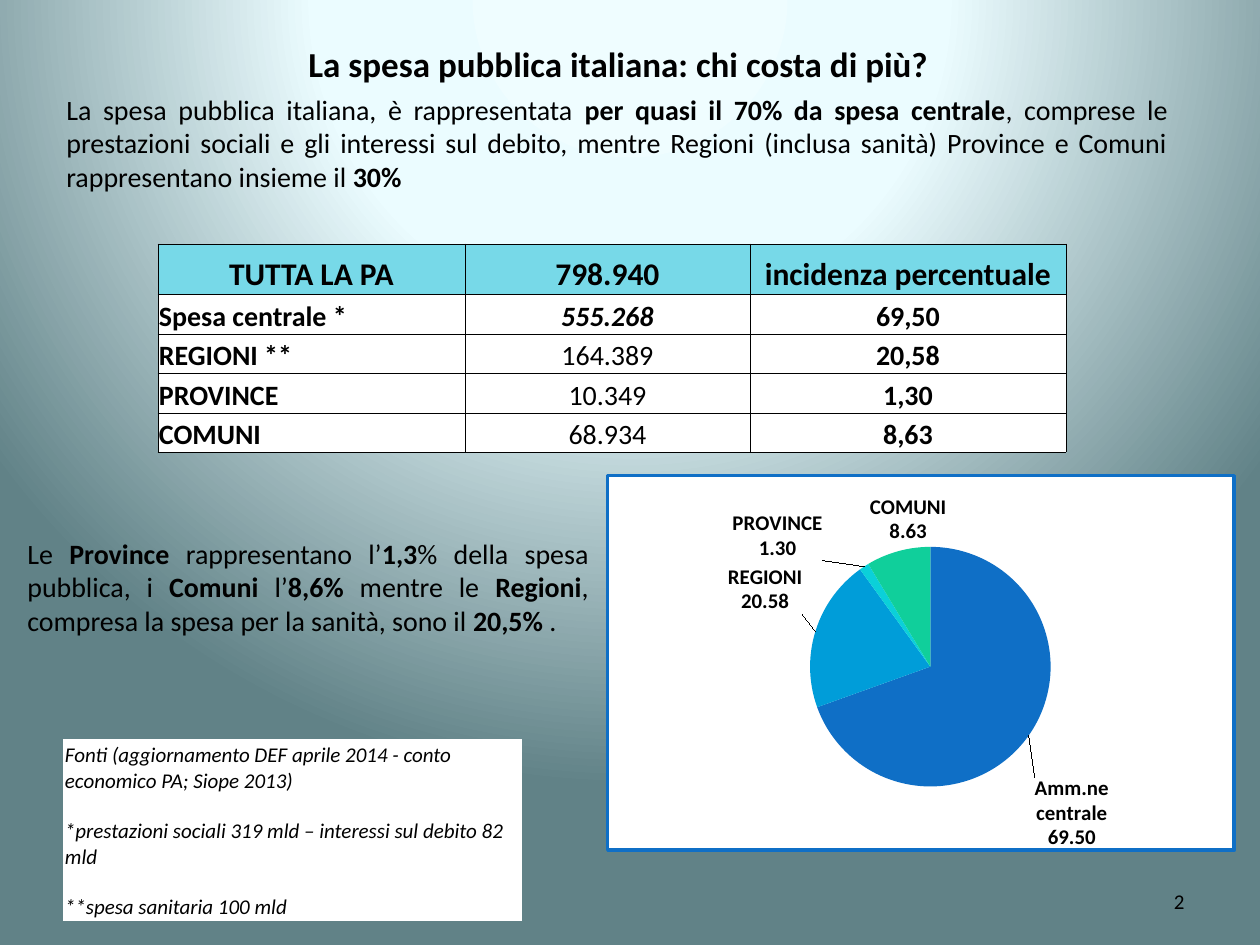
from copy import deepcopy
from dataclasses import dataclass

from pptx import Presentation
from pptx.chart.data import CategoryChartData
from pptx.dml.color import RGBColor
from pptx.enum.chart import XL_CHART_TYPE, XL_LABEL_POSITION
from pptx.enum.text import MSO_ANCHOR, PP_ALIGN
from pptx.oxml import parse_xml
from pptx.oxml.ns import nsdecls, qn
from pptx.util import Emu, Pt

PIE = XL_CHART_TYPE.PIE
OUTSIDE = XL_LABEL_POSITION.OUTSIDE_END
TOP, MIDDLE, BOTTOM = MSO_ANCHOR.TOP, MSO_ANCHOR.MIDDLE, MSO_ANCHOR.BOTTOM
LEFT, CENTER, RIGHT, JUSTIFY = PP_ALIGN.LEFT, PP_ALIGN.CENTER, PP_ALIGN.RIGHT, PP_ALIGN.JUSTIFY
EMU_PER_PX = 914400 // 126
BOLD = {"bold": True}
ITALIC = {"italic": True}


@dataclass(frozen=True)
class Theme:
    font: str = "Calibri"
    ink: str = "000000"
    paper: str = "FFFFFF"
    header: str = "77D9E8"
    frame: str = "0F6FC6"
    slices: tuple = ("0F6FC6", "009DD9", "0BD0D9", "10CF9B")
    backdrop: tuple = ((0, "EFFDFF"), (40, "EBFCFF"), (100, "618287"))
    title: int = 20
    heading: int = 18
    body: int = 16
    small: int = 12
    chart: int = 10


THEME = Theme()


@dataclass(frozen=True)
class Box:
    left: int
    top: int
    width: int
    height: int

    def emu(self) -> tuple:
        return tuple(px(value) for value in (self.left, self.top, self.width, self.height))


@dataclass(frozen=True)
class Run:
    text: str
    style: dict


@dataclass(frozen=True)
class TextBlock:
    box: Box
    runs: tuple
    size: int
    align: PP_ALIGN = JUSTIFY
    anchor: MSO_ANCHOR = MIDDLE
    wrap: bool = True


@dataclass(frozen=True)
class Cell:
    text: str
    style: dict
    size: int
    align: PP_ALIGN = LEFT
    fill: str = THEME.paper


@dataclass(frozen=True)
class Slice:
    name: str
    value: float
    shift: tuple


def px(value: int) -> Emu:
    return Emu(value * EMU_PER_PX)


def rgb(value: str) -> RGBColor:
    return RGBColor.from_string(value)


def apply(target, values: dict) -> None:
    for name, value in values.items():
        setattr(target, name, value)


def style_font(font, size: int, style: dict) -> None:
    apply(font, {"name": THEME.font, "size": Pt(size), **style})
    font.color.rgb = rgb(THEME.ink)


def write(paragraph, runs: tuple, size: int, align: PP_ALIGN) -> None:
    paragraph.alignment = align
    for item in runs:
        run = paragraph.add_run()
        run.text = item.text
        style_font(run.font, size, item.style)


def paint_background(slide) -> None:
    stops = "".join(
        f'<a:gs pos="{position * 1000}"><a:srgbClr val="{color}"/></a:gs>'
        for position, color in THEME.backdrop
    )
    background = parse_xml(
        f'<p:bg {nsdecls("p", "a")}><p:bgPr><a:gradFill rotWithShape="1"><a:gsLst>{stops}</a:gsLst>'
        '<a:path path="circle"><a:fillToRect l="50000" t="-80000" r="50000" b="180000"/></a:path>'
        "</a:gradFill><a:effectLst/></p:bgPr></p:bg>"
    )
    slide.element.cSld.insert(0, background)


def add_text(slide, block: TextBlock) -> None:
    frame = slide.shapes.add_textbox(*block.box.emu()).text_frame
    apply(frame, {"word_wrap": block.wrap, "vertical_anchor": block.anchor})
    write(frame.paragraphs[0], block.runs, block.size, block.align)


def add_border(cell) -> None:
    properties = cell._tc.get_or_add_tcPr()
    for index, side in enumerate(("lnL", "lnR", "lnT", "lnB")):
        line = parse_xml(
            f'<a:{side} {nsdecls("a")} w="6350"><a:solidFill>'
            f'<a:srgbClr val="{THEME.ink}"/></a:solidFill></a:{side}>'
        )
        properties.insert(index, line)


def add_grid(slide, left: int, top: int, widths: tuple, heights: tuple, rows: list, border: bool) -> None:
    box = Box(left, top, sum(widths), sum(heights))
    table = slide.shapes.add_table(len(heights), len(widths), *box.emu()).table
    apply(table, {"first_row": False, "horz_banding": False})
    for column, width in zip(table.columns, widths):
        column.width = px(width)
    for row, height, contents in zip(table.rows, heights, rows):
        row.height = px(height)
        for cell, content in zip(row.cells, contents):
            apply(cell, {"margin_left": px(1), "margin_right": px(1), "margin_top": px(1),
                         "margin_bottom": 0, "vertical_anchor": BOTTOM})
            cell.fill.solid()
            cell.fill.fore_color.rgb = rgb(content.fill)
            write(cell.text_frame.paragraphs[0], (Run(content.text, content.style),), content.size, content.align)
            if border:
                add_border(cell)


def manual_layout(**values) -> str:
    parts = "".join(f'<c:{name} val="{value}"/>' for name, value in values.items())
    return f'<c:layout {nsdecls("c")}><c:manualLayout>{parts}</c:manualLayout></c:layout>'


def place_labels(series, slices: tuple) -> None:
    labels = series.data_labels
    apply(labels, {"show_value": True, "show_category_name": True, "number_format": "#,##0.00",
                   "number_format_is_linked": False, "position": OUTSIDE})
    style_font(labels.font, THEME.small, BOLD)
    group = labels._element
    leader = group.find(qn("c:showLeaderLines"))
    leader.set("val", "1")
    leader.addprevious(parse_xml(f'<c:separator {nsdecls("c")}>\n</c:separator>'))
    shared = [child for child in group if child is not leader]
    for index, item in enumerate(slices):
        label = parse_xml(f'<c:dLbl {nsdecls("c")}><c:idx val="{index}"/></c:dLbl>')
        label.append(parse_xml(manual_layout(x=item.shift[0], y=item.shift[1])))
        label.extend(deepcopy(shared))
        group.insert(index, label)


def add_pie(slide, box: Box, slices: tuple) -> None:
    data = CategoryChartData()
    data.categories = [item.name for item in slices]
    data.add_series("Series 1", [item.value for item in slices])
    chart = slide.shapes.add_chart(PIE, *box.emu(), data).chart
    apply(chart, {"has_legend": False, "has_title": False})
    style_font(chart.font, THEME.chart, {})
    plot = chart.plots[0]
    plot.vary_by_categories = True
    series = plot.series[0]
    for index, color in enumerate(THEME.slices):
        fill = series.points[index].format.fill
        fill.solid()
        fill.fore_color.rgb = rgb(color)
    place_labels(series, slices)
    area = chart._chartSpace.chart.plotArea
    for layout in area.findall(qn("c:layout")):
        area.remove(layout)
    area.insert(0, parse_xml(manual_layout(
        layoutTarget="inner", xMode="edge", yMode="edge", x=0.32, y=0.19, w=0.39, h=0.64)))
    chart._chartSpace.chart.addnext(parse_xml(
        f'<c:spPr {nsdecls("c", "a")}><a:solidFill><a:srgbClr val="{THEME.paper}"/></a:solidFill>'
        f'<a:ln w="25400"><a:solidFill><a:srgbClr val="{THEME.frame}"/></a:solidFill></a:ln></c:spPr>'))


TEXTS = (
    TextBlock(Box(54, 85, 1126, 115), (
        Run("La spesa pubblica italiana, è rappresentata ", {}),
        Run("per quasi il 70% da spesa centrale", BOLD),
        Run(", comprese le prestazioni sociali e gli interessi sul debito, mentre Regioni "
            "(inclusa sanità) Province e Comuni rappresentano insieme il ", {}),
        Run("30%", BOLD)), THEME.body),
    TextBlock(Box(15, 530, 586, 134), (
        Run("Le ", {}), Run("Province", BOLD), Run(" rappresentano l’", {}), Run("1,3", BOLD),
        Run("% della spesa pubblica, i ", {}), Run("Comuni ", BOLD), Run("l’", {}), Run("8,6%", BOLD),
        Run(" mentre le ", {}), Run("Regioni", BOLD), Run(", compresa la spesa per la sanità, sono il ", {}),
        Run("20,5%", BOLD), Run(" .", {})), THEME.body, anchor=TOP),
    TextBlock(Box(296, 36, 649, 55), (Run("La spesa pubblica italiana: chi costa di più?", BOLD),),
              THEME.title, anchor=TOP, wrap=False),
    TextBlock(Box(903, 876, 294, 50), (Run("2", {}),), THEME.small, RIGHT),
)
NOTES = ("Fonti (aggiornamento DEF aprile 2014 - conto economico PA; Siope 2013)",
         "*prestazioni sociali 319 mld – interessi sul debito 82 mld",
         "**spesa sanitaria 100 mld")
HEADINGS = ("TUTTA LA PA", "798.940", "incidenza percentuale")
SPENDING = (("Spesa centrale *", "555.268", "69,50", {**BOLD, **ITALIC}),
            ("REGIONI **", "164.389", "20,58", {}),
            ("PROVINCE", "10.349", "1,30", {}),
            ("COMUNI", "68.934", "8,63", {}))
SLICES = (Slice("Amm.ne centrale", 69.5, (0, 0.1)),
          Slice("REGIONI", 20.58, (-0.01, -0.04)),
          Slice("PROVINCE", 1.3, (-0.06, 0)),
          Slice("COMUNI", 8.63, (0.08, 0)))


def main() -> None:
    presentation = Presentation()
    apply(presentation, {"slide_width": px(1260), "slide_height": px(945)})
    slide = presentation.slides.add_slide(presentation.slide_layouts[6])
    paint_background(slide)
    for block in TEXTS:
        add_text(slide, block)
    notes = [[Cell(text, ITALIC, THEME.small)] for text in NOTES]
    add_grid(slide, 64, 740, (457,), (54, 76, 50), notes, False)
    rows = [[Cell(text, BOLD, THEME.heading, CENTER, THEME.header) for text in HEADINGS]]
    for name, amount, share, style in SPENDING:
        rows.append([Cell(name, BOLD, THEME.body), Cell(amount, style, THEME.body, CENTER),
                     Cell(share, BOLD, THEME.body, CENTER)])
    add_grid(slide, 158, 244, (307, 285, 316), (50, 40, 39, 40, 39), rows, True)
    add_pie(slide, Box(606, 474, 630, 378), SLICES)
    presentation.save("out.pptx")


if __name__ == "__main__":
    main()
